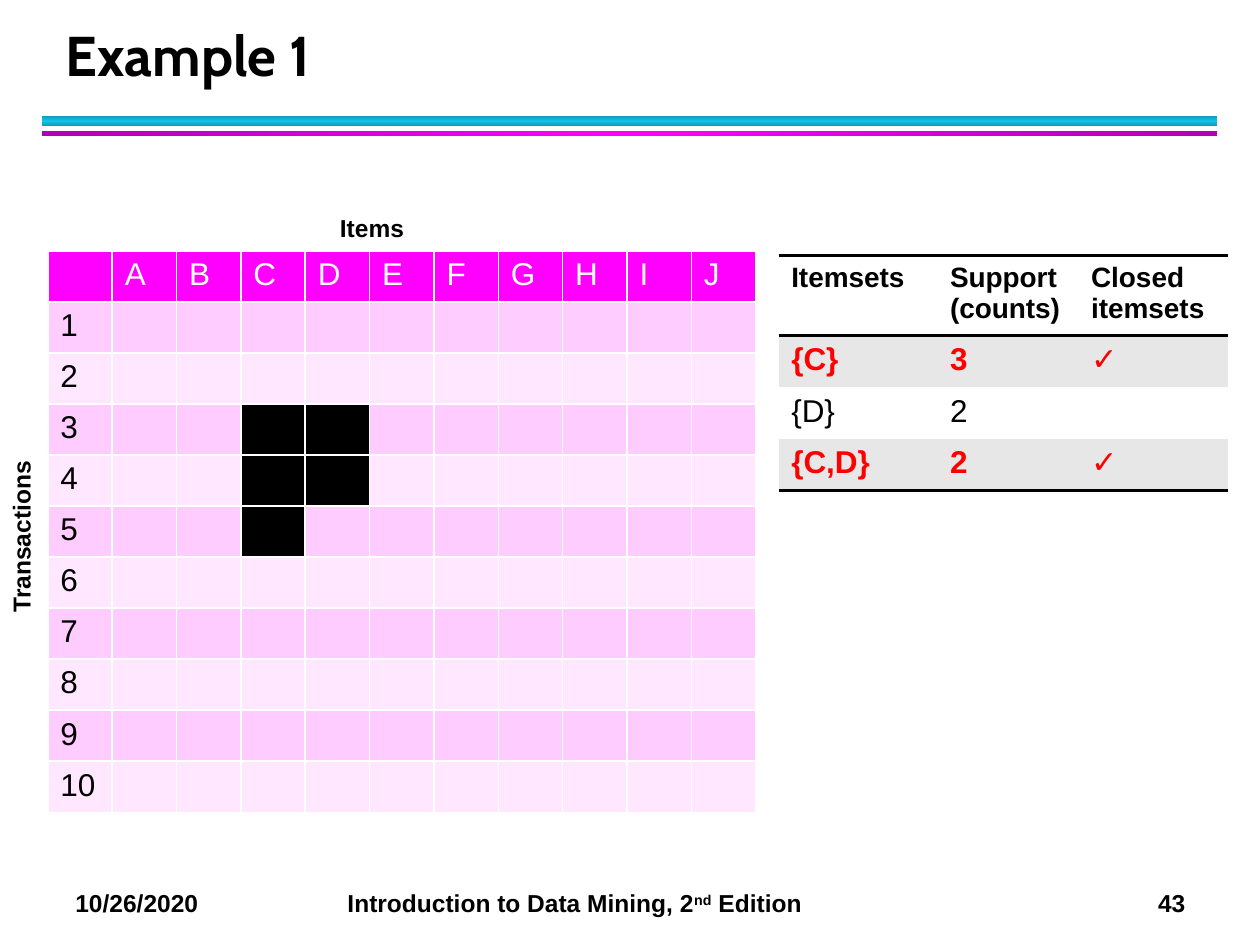
import copy

import pptx
import pptx.dml.color
import pptx.enum.shapes
import pptx.enum.text
import pptx.oxml
import pptx.oxml.ns
import pptx.util
from pptx.util import Inches

RGBColor = pptx.dml.color.RGBColor
BLACK = RGBColor(0x00, 0x00, 0x00)
WHITE = RGBColor(0xFF, 0xFF, 0xFF)
RED = RGBColor(0xFF, 0x00, 0x00)
GRAY = RGBColor(0xE7, 0xE7, 0xE7)
MAGENTA = RGBColor(0xFF, 0x00, 0xFF)
DARK_MAGENTA = RGBColor(0xB2, 0x00, 0xB2)
PINK = RGBColor(0xFF, 0xCC, 0xFF)
PALE_PINK = RGBColor(0xFF, 0xE7, 0xFF)
CYAN = RGBColor(0x12, 0xC2, 0xE9)
DARK_CYAN = RGBColor(0x0E, 0x9B, 0xBA)

ITEMS = "ABCDEFGHIJ"
TRANSACTION_COUNT = 10
PURCHASES = {3: "CD", 4: "CD", 5: "C"}
ITEMSETS = [("{C}", "3", True), ("{D}", "2", False), ("{C,D}", "2", True)]


def add_run(paragraph, text, size, color=BLACK, bold=True, font="Arial"):
    run = paragraph.add_run()
    run.text = text
    run.font.name = font
    run.font.size = pptx.util.Pt(size)
    run.font.bold = bold
    run.font.color.rgb = color
    return run


def set_title(slide, text):
    title = slide.shapes.title
    title.left, title.top = Inches(0.42), Inches(0.17)
    title.width, title.height = Inches(9.06), Inches(0.58)
    frame = title.text_frame
    frame.auto_size = pptx.enum.text.MSO_AUTO_SIZE.NONE
    frame.vertical_anchor = pptx.enum.text.MSO_ANCHOR.BOTTOM
    paragraph = frame.paragraphs[0]
    paragraph.alignment = pptx.enum.text.PP_ALIGN.LEFT
    paragraph.line_spacing = pptx.util.Pt(36)
    add_run(paragraph, text, 32, font="Cabin")


def add_gradient_bar(slide, top, height, edge, middle, angle):
    bar = slide.shapes.add_shape(
        pptx.enum.shapes.MSO_SHAPE.RECTANGLE,
        Inches(0.33), Inches(top), Inches(9.33), Inches(height))
    bar.shadow.inherit = False
    bar.line.fill.background()
    bar.fill.gradient()
    bar.fill.gradient_angle = angle
    stop_list = bar.element.spPr.find(".//" + pptx.oxml.ns.qn("a:gsLst"))
    stop_list.append(copy.deepcopy(stop_list[0]))
    colors = (edge, middle, edge)
    for stop, position, color in zip(bar.fill.gradient_stops, (0, 0.5, 1), colors):
        stop.position = position
        stop.color.rgb = color


def add_label(slide, text, left, top, width, rotation=0):
    label = slide.shapes.add_textbox(
        Inches(left), Inches(top), Inches(width), Inches(0.4))
    label.rotation = rotation
    label.text_frame.word_wrap = False
    add_run(label.text_frame.paragraphs[0], text, 14)


def add_footer(slide, date, name, number):
    footer = slide.shapes.add_textbox(
        Inches(0.5), Inches(7), Inches(9.33), Inches(0.34))
    footer.text_frame.word_wrap = True
    paragraph = footer.text_frame.paragraphs[0]
    tabs = "".join(
        f'<a:tab pos="{Inches(position)}" algn="{alignment}"/>'
        for position, alignment in ((2.16, "l"), (8.81, "r")))
    paragraph._p.get_or_add_pPr().append(pptx.oxml.parse_xml(
        f'<a:tabLst {pptx.oxml.ns.nsdecls("a")}>{tabs}</a:tabLst>'))
    add_run(paragraph, f"{date}\t{name}, 2", 14)
    ordinal = add_run(paragraph, "nd", 14)
    ordinal.font._element.set("baseline", "30000")
    add_run(paragraph, f" Edition\t{number}", 14)


def add_plain_table(slide, left, top, column_widths, row_heights):
    frame = slide.shapes.add_table(
        len(row_heights), len(column_widths), Inches(left), Inches(top),
        Inches(sum(column_widths)), Inches(sum(row_heights)))
    table = frame.table
    table.first_row = False
    table.horz_banding = False
    for column, width in zip(table.columns, column_widths):
        column.width = Inches(width)
    for row, height in zip(table.rows, row_heights):
        row.height = Inches(height)
    return table


def format_cell(cell, fill, borders):
    properties = cell._tc.get_or_add_tcPr()
    for side in "LRTB":
        color, points = borders.get(side, (None, 0))
        paint = "<a:noFill/>"
        if color is not None:
            paint = f'<a:solidFill><a:srgbClr val="{color}"/></a:solidFill>'
        properties.append(pptx.oxml.parse_xml(
            f'<a:ln{side} {pptx.oxml.ns.nsdecls("a")} '
            f'w="{pptx.util.Pt(points)}">{paint}</a:ln{side}>'))
    cell.fill.solid()
    cell.fill.fore_color.rgb = fill


def write_cell(cell, text, size, color, bold):
    for index, line in enumerate(text.split("\n")):
        frame = cell.text_frame
        paragraph = frame.add_paragraph() if index else frame.paragraphs[0]
        if line:
            add_run(paragraph, line, size, color, bold)
        else:
            paragraph.font.size = pptx.util.Pt(size)


def add_transaction_table(slide):
    columns, rows = len(ITEMS) + 1, TRANSACTION_COUNT + 1
    table = add_plain_table(
        slide, 0.38, 1.99, [5.62 / columns] * columns, [4.46 / rows] * rows)
    borders = dict.fromkeys("LRTB", (WHITE, 1))
    for row in range(rows):
        band = PINK if row % 2 else PALE_PINK
        for column, item in enumerate(" " + ITEMS):
            cell = table.cell(row, column)
            bought = item in PURCHASES.get(row, ())
            fill = MAGENTA if row == 0 else BLACK if bought else band
            format_cell(cell, fill, borders)
            if row == 0:
                text = item.strip()
            else:
                text = "" if column else str(row)
            write_cell(cell, text, 18, BLACK if row else WHITE, False)


def add_itemset_table(slide):
    table = add_plain_table(
        slide, 6.18, 2.03, [1.26, 1.12, 1.19], [0.63, 0.41, 0.41, 0.41])
    rule = (BLACK, 2)
    for column, text in enumerate(("Itemsets", "Support\n(counts)", "Closed itemsets")):
        cell = table.cell(0, column)
        format_cell(cell, WHITE, {"T": rule, "B": rule})
        write_cell(cell, text, 16, BLACK, True)
    for row, (itemset, support, closed) in enumerate(ITEMSETS, start=1):
        borders = {}
        if row == 1:
            borders["T"] = rule
        if row == len(ITEMSETS):
            borders["B"] = rule
        for column, text in enumerate((itemset, support, "✓" if closed else "")):
            cell = table.cell(row, column)
            format_cell(cell, GRAY if row % 2 else WHITE, borders)
            write_cell(cell, text, 18, RED if closed else BLACK, closed)


def main():
    presentation = pptx.Presentation()
    presentation.slide_width = Inches(10)
    presentation.slide_height = Inches(7.5)
    slide = presentation.slides.add_slide(presentation.slide_layouts[5])
    add_gradient_bar(slide, 0.92, 0.08, DARK_CYAN, CYAN, 90)
    add_gradient_bar(slide, 1.04, 0.04, DARK_MAGENTA, MAGENTA, 0)
    add_footer(slide, "10/26/2020", "Introduction to Data Mining", 43)
    set_title(slide, "Example 1")
    add_transaction_table(slide)
    add_label(slide, "Items", 2.6, 1.64, 0.77)
    add_label(slide, "Transactions", -0.54, 4.02, 1.48, rotation=270)
    add_itemset_table(slide)
    presentation.save("out.pptx")


if __name__ == "__main__":
    main()
